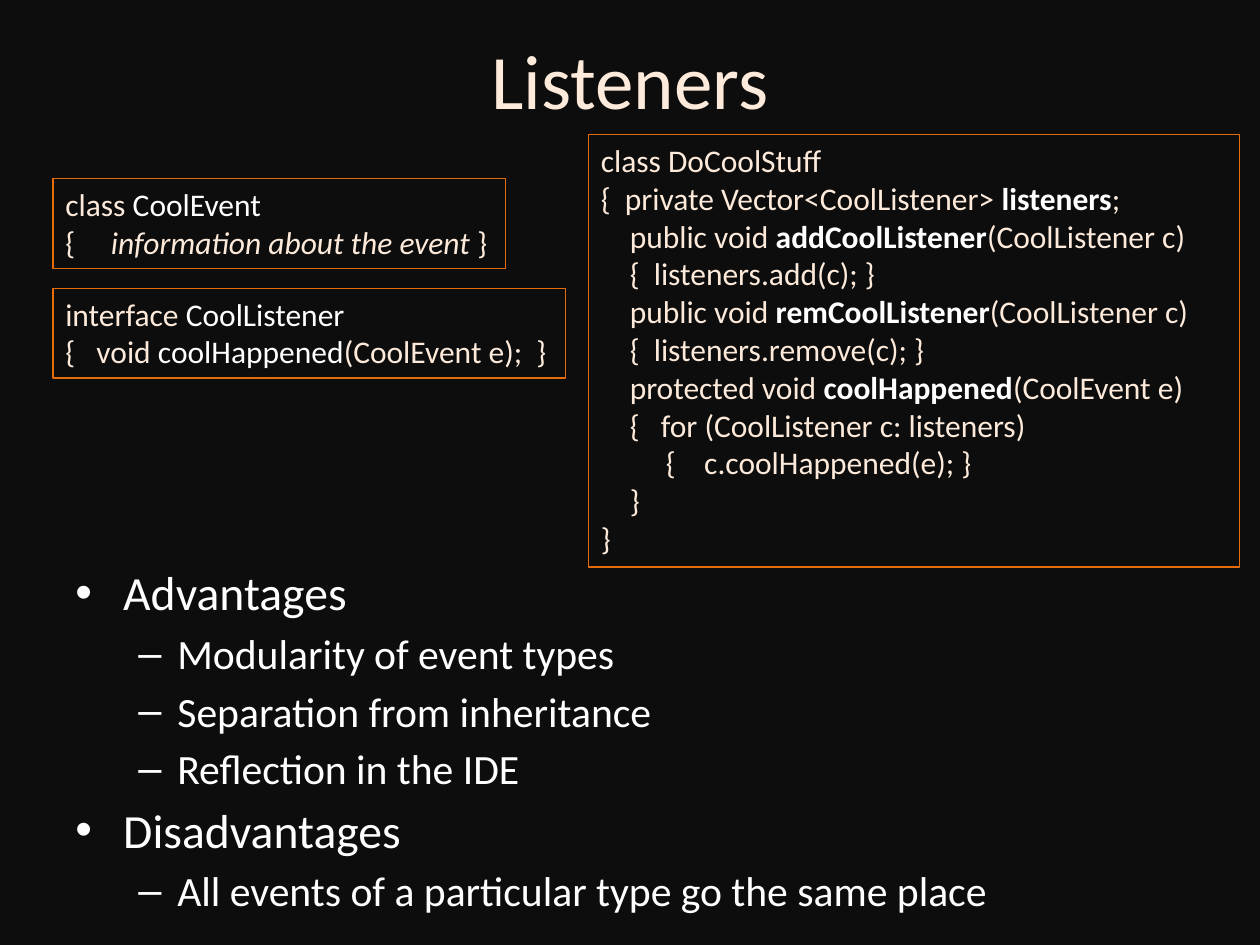
from dataclasses import dataclass, field

from lxml import etree
from pptx import Presentation
from pptx import util as u
from pptx.dml.color import RGBColor as Rgb
from pptx.enum import shapes, text
from pptx.oxml.ns import qn


@dataclass(frozen=True)
class Theme:
    font: str = "Calibri"
    back: Rgb = Rgb(0x0D, 0x0D, 0x0D)
    cream: Rgb = Rgb(0xFD, 0xEA, 0xDA)
    white: Rgb = Rgb(0xFF, 0xFF, 0xFF)
    edge: Rgb = Rgb(0xE4, 0x6C, 0x0A)
    title: float = 44
    code: float = 18
    gap: float = 4.35


@dataclass(frozen=True)
class Area:
    """A rectangle in percent of the slide's width and height."""
    left: float
    top: float
    width: float
    height: float


@dataclass(frozen=True)
class Run:
    text: str
    white: bool = False
    bold: bool = False
    italic: bool = False


@dataclass(frozen=True)
class Line:
    runs: list[Run]
    indent: float = 0


@dataclass(frozen=True)
class Level:
    mark: str
    size: float
    left: float
    hang: float


@dataclass(frozen=True)
class Topic:
    head: str
    points: list[str] = field(default_factory=list)


THEME = Theme()
WIDE, HIGH = u.Inches(10), u.Inches(7.5)
STEP = 0.23  # one level of code, in inches
HEAD = Level("•", 27.2, 0.38, 0.38)
POINT = Level("–", 23.8, 0.81, 0.31)


def code(*parts: str | Run, depth: float = 0) -> Line:
    """Plain strings become cream runs."""
    runs = [p if isinstance(p, Run) else Run(p) for p in parts]
    return Line(runs, depth * STEP)


def key(word: str) -> Run:
    return Run(word, white=True, bold=True)


def name(word: str) -> Run:
    return Run(word, white=True)


BOXES = [
    (Area(4.2, 18.93, 35.9, 9.47), [
        code("class ", name("CoolEvent")),
        code("{     ", Run("information about the event ", italic=True), "}"),
    ]),
    (Area(4.2, 30.53, 40.7, 9.47), [
        code("interface ", name("CoolListener")),
        code("{   void ", name("coolHappened"), "(CoolEvent e);  }"),
    ]),
    (Area(46.7, 14.27, 51.7, 45.73), [
        code("class DoCoolStuff"),
        code("{  private Vector<CoolListener> ", key("listeners"), ";"),
        code("public void ", key("addCoolListener"), "(CoolListener c)", depth=1),
        code("{  listeners.add(c); }", depth=1),
        code("public void ", key("remCoolListener"), "(CoolListener c)", depth=1),
        code("{  listeners.remove(c); }", depth=1),
        code("protected void ", key("coolHappened"), "(CoolEvent e)", depth=1),
        code("{   for (CoolListener c: listeners)", depth=1),
        code("{    c.coolHappened(e); }", depth=2.25),
        code("}", depth=1),
        code("}"),
    ]),
]

TOPICS = [
    Topic("Advantages", ["Modularity of event types",
                         "Separation from inheritance",
                         "Reflection in the IDE"]),
    Topic("Disadvantages", ["All events of a particular type go the same place"]),
]


def place(area: Area) -> tuple[int, int, int, int]:
    return (int(WIDE * area.left / 100), int(HIGH * area.top / 100),
            int(WIDE * area.width / 100), int(HIGH * area.height / 100))


def style(para, size: float, color: Rgb) -> None:
    para.font.name = THEME.font
    para.font.size = u.Pt(size)
    para.font.color.rgb = color


def indent(para, left: float, hang: float = 0):
    props = para._p.get_or_add_pPr()
    props.set("marL", str(u.Inches(left)))
    props.set("indent", str(-u.Inches(hang)))
    return props


def paras(frame, count: int) -> list:
    return [frame.paragraphs[0]] + [frame.add_paragraph() for _ in range(count - 1)]


def draw_title(slide, words: str, area: Area) -> None:
    frame = slide.shapes.add_textbox(*place(area)).text_frame
    frame.word_wrap = True
    frame.vertical_anchor = text.MSO_ANCHOR.MIDDLE
    para = frame.paragraphs[0]
    para.text = words
    para.alignment = text.PP_ALIGN.CENTER
    style(para, THEME.title, THEME.cream)


def draw_list(slide, topics: list[Topic], area: Area) -> None:
    frame = slide.shapes.add_textbox(*place(area)).text_frame
    frame.word_wrap = True
    rows = [row for t in topics
            for row in [(HEAD, t.head), *((POINT, p) for p in t.points)]]
    for i, (para, (level, words)) in enumerate(zip(paras(frame, len(rows)), rows)):
        para.text = words
        para.level = int(level is POINT)
        para.space_before = u.Pt(THEME.gap if i else 0)
        props = indent(para, level.left, level.hang)
        etree.SubElement(props, qn("a:buFont")).set("typeface", "Arial")
        etree.SubElement(props, qn("a:buChar")).set("char", level.mark)
        style(para, level.size, THEME.white)


def draw_code(slide, lines: list[Line], area: Area) -> None:
    box = slide.shapes.add_shape(shapes.MSO_SHAPE.RECTANGLE, *place(area))
    box.shadow.inherit = False
    box.fill.background()
    box.line.color.rgb = THEME.edge
    box.line.width = u.Pt(0.75)
    frame = box.text_frame
    frame.word_wrap = True
    frame.vertical_anchor = text.MSO_ANCHOR.TOP
    for para, line in zip(paras(frame, len(lines)), lines):
        para.alignment = text.PP_ALIGN.LEFT
        indent(para, line.indent)
        style(para, THEME.code, THEME.cream)
        for part in line.runs:
            run = para.add_run()
            run.text = part.text
            run.font.bold = part.bold
            run.font.italic = part.italic
            run.font.color.rgb = THEME.white if part.white else THEME.cream


def main() -> None:
    deck = Presentation()
    deck.slide_width, deck.slide_height = WIDE, HIGH
    slide = deck.slides.add_slide(deck.slide_layouts[6])
    slide.background.fill.solid()
    slide.background.fill.fore_color.rgb = THEME.back
    draw_title(slide, "Listeners", Area(5, 0, 90, 16.67))
    draw_list(slide, TOPICS, Area(5, 58.93, 90, 36))
    for area, lines in BOXES:
        draw_code(slide, lines, area)
    deck.save("out.pptx")


if __name__ == "__main__":
    main()
